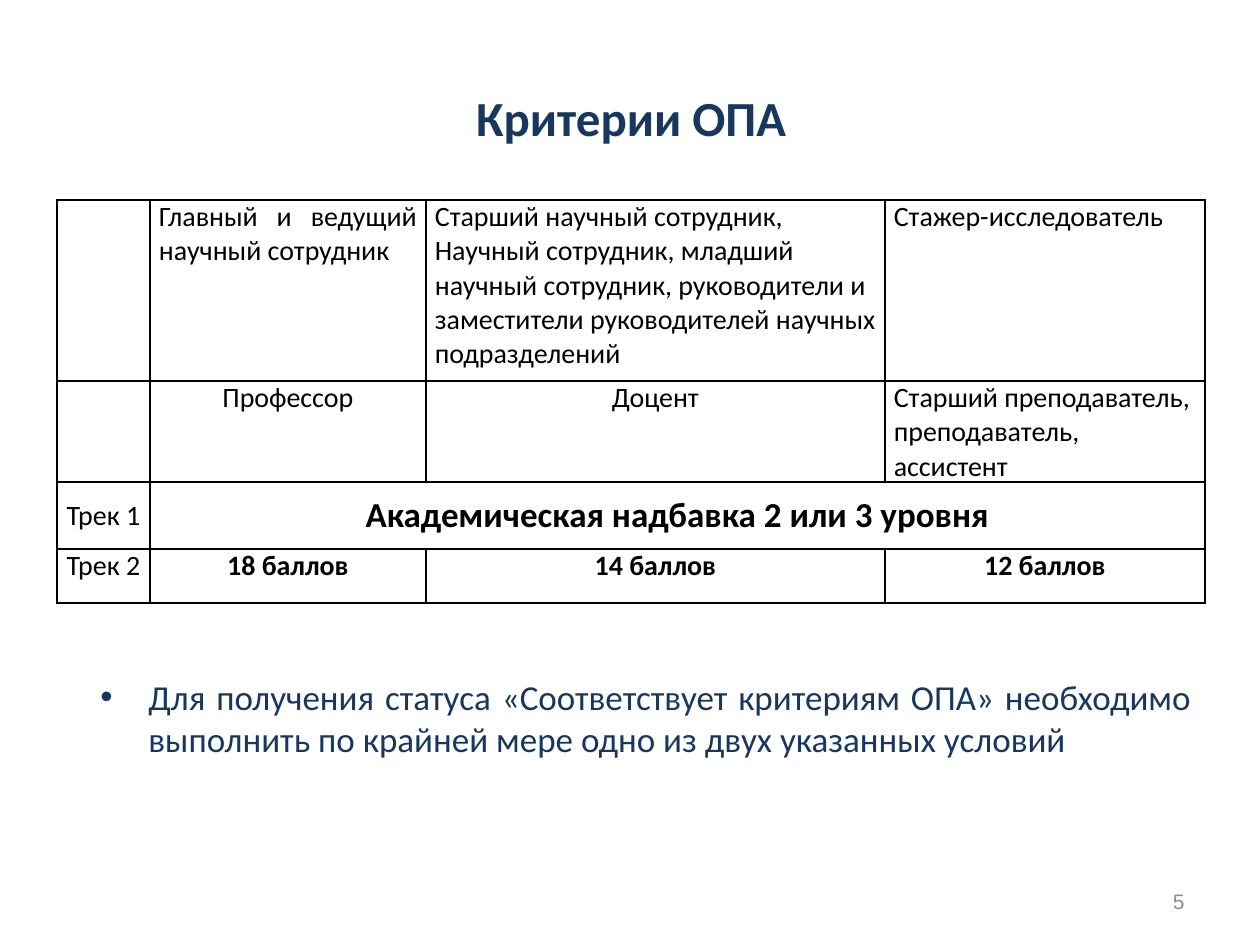
import pptx
import pptx.dml.color
import pptx.enum.text
import pptx.oxml.ns
import pptx.util
from lxml import etree

ALIGN = pptx.enum.text.PP_ALIGN
ANCHOR = pptx.enum.text.MSO_ANCHOR
NAVY = "17375E"
BLACK = "000000"
WHITE = "FFFFFF"

COLUMNS = [93, 276, 459, 320]
ROWS = [181, 101, 67, 54]
CELLS = [
    [("", ALIGN.LEFT),
     ("Главный и ведущий научный сотрудник", ALIGN.JUSTIFY),
     ("Cтарший научный сотрудник, Научный сотрудник, младший научный сотрудник, "
      "руководители и заместители руководителей научных подразделений", ALIGN.LEFT),
     ("Стажер-исследователь", ALIGN.JUSTIFY)],
    [("", ALIGN.LEFT), ("Профессор", ALIGN.CENTER), ("Доцент", ALIGN.CENTER),
     ("Старший преподаватель, преподаватель, ассистент", ALIGN.LEFT)],
    [("Трек 1", ALIGN.CENTER), ("Академическая надбавка 2 или 3 уровня", ALIGN.CENTER),
     ("", ALIGN.LEFT), ("", ALIGN.LEFT)],
    [("Трек 2", ALIGN.CENTER), ("18 баллов", ALIGN.CENTER),
     ("14 баллов", ALIGN.CENTER), ("12 баллов", ALIGN.CENTER)],
]
TRACK_1, TRACK_2 = 2, 3


def px(n):
    """Turn pixels into EMU."""
    return pptx.util.Emu(round(n * 914400 / 126))


def rgb(value):
    """Turn a hex string into a colour."""
    return pptx.dml.color.RGBColor.from_string(value)


def write(tf, text, size, color, align, font="Calibri", bold=False):
    """Fill a text frame with one formatted paragraph and return it."""
    tf.text = text
    p = tf.paragraphs[0]
    p.alignment = align
    for r in p.runs:
        r.font.name = font
        r.font.size = pptx.util.Pt(size)
        r.font.bold = bold
        r.font.color.rgb = rgb(color)
    return p


def add_text(s, box, *args, anchor=ANCHOR.TOP, **kwargs):
    """Add a wrapping text box and return its text frame."""
    tf = s.shapes.add_textbox(*map(px, box)).text_frame
    tf.word_wrap = True
    tf.vertical_anchor = anchor
    write(tf, *args, **kwargs)
    return tf


def add_bullet(p, indent):
    """Give a paragraph a round bullet with a hanging indent."""
    pPr = p._p.get_or_add_pPr()
    pPr.set("marL", str(px(indent)))
    pPr.set("indent", str(-px(indent)))
    etree.SubElement(pPr, pptx.oxml.ns.qn("a:buFont"), typeface="Arial")
    etree.SubElement(pPr, pptx.oxml.ns.qn("a:buChar"), char="•")


def add_borders(cell, color):
    """Draw a one-point line on every side of a cell."""
    qn = pptx.oxml.ns.qn
    tcPr = cell._tc.get_or_add_tcPr()
    for side in "LRTB":
        ln = etree.SubElement(tcPr, qn(f"a:ln{side}"), w=str(pptx.util.Pt(1)))
        fill = etree.SubElement(ln, qn("a:solidFill"))
        etree.SubElement(fill, qn("a:srgbClr"), val=color)


def format_cell(cell):
    """Set the borders, fill and margins of a cell."""
    add_borders(cell, BLACK)
    cell.fill.solid()
    cell.fill.fore_color.rgb = rgb(WHITE)
    cell.margin_left = cell.margin_right = px(9)
    cell.margin_top = cell.margin_bottom = 0


def add_criteria_table(s, left, top):
    """Add the table of criteria by position and track."""
    table = s.shapes.add_table(len(ROWS), len(COLUMNS), px(left), px(top),
                               px(sum(COLUMNS)), px(sum(ROWS))).table
    table.first_row = table.horz_banding = False
    for column, width in zip(table.columns, COLUMNS):
        column.width = px(width)
    for row, height in zip(table.rows, ROWS):
        row.height = px(height)
    for i, row in enumerate(CELLS):
        for j, (text, align) in enumerate(row):
            cell = table.cell(i, j)
            format_cell(cell)
            condition = i >= TRACK_1 and j > 0
            size = 20 if condition and i == TRACK_1 else 16
            write(cell.text_frame, text, size, BLACK, align, bold=condition)
            if i == TRACK_1:
                cell.vertical_anchor = ANCHOR.MIDDLE
    table.cell(TRACK_1, 1).merge(table.cell(TRACK_1, 3))


def main():
    """Build the slide and save it."""
    prs = pptx.Presentation()
    prs.slide_width, prs.slide_height = px(1260), px(945)
    s = prs.slides.add_slide(prs.slide_layouts[6])
    add_text(s, (88, 81, 1086, 118), "Критерии ОПА", 28, NAVY, ALIGN.CENTER, bold=True)
    add_text(s, (903, 876, 294, 50), "5", 12, "8C8C8C", ALIGN.RIGHT,
             font="Arial", anchor=ANCHOR.MIDDLE)
    add_criteria_table(s, 57, 200)
    tf = add_text(s, (88, 622, 1116, 144),
                  "Для получения статуса «Соответствует критериям ОПА» необходимо "
                  "выполнить по крайней мере одно из двух указанных условий",
                  20, NAVY, ALIGN.JUSTIFY)
    tf.margin_top = px(53)
    add_bullet(tf.paragraphs[0], 48)
    prs.save("out.pptx")


if __name__ == "__main__":
    main()
